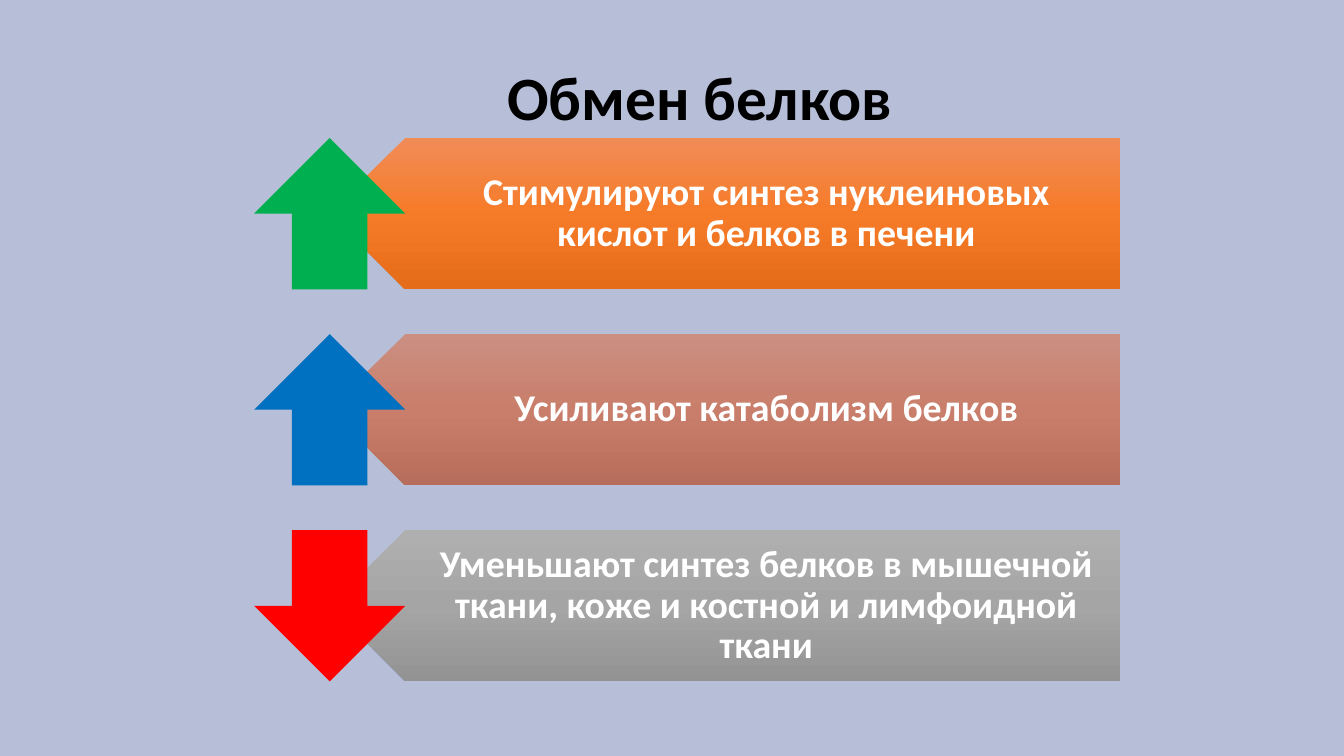
from dataclasses import dataclass
from lxml.etree import SubElement
from pptx import Presentation
from pptx.dml.color import RGBColor
from pptx.enum.shapes import MSO_SHAPE
from pptx.enum.text import MSO_ANCHOR, PP_ALIGN
from pptx.oxml.ns import qn
from pptx.util import Inches, Pt


@dataclass(frozen=True)
class Theme:
    font: str = "Calibri"
    back: str = "B7BED7"
    dark: str = "000000"
    light: str = "FFFFFF"
    green: str = "00B050"
    blue: str = "0070C0"
    red: str = "FF0000"
    orange: tuple = ("F18C57", "F67B28", "E56C19")
    brown: tuple = ("CB8F81", "C97E6B", "B76D5B")
    gray: tuple = ("AFAFAF", "A5A5A5", "939393")
    head: int = 44
    body: int = 27


class Deck:
    def __init__(self, theme):
        self.theme = theme
        self.show = Presentation()
        self.show.slide_width = Inches(13.33)
        self.show.slide_height = Inches(7.5)
        self.slide = self.show.slides.add_slide(self.show.slide_layouts[5])
        fill = self.slide.background.fill
        fill.solid()
        fill.fore_color.rgb = RGBColor.from_string(theme.back)

    def style(self, frame, text, size, color, align):
        frame.text = text
        frame.word_wrap = True
        frame.vertical_anchor = MSO_ANCHOR.MIDDLE
        line = frame.paragraphs[0]
        line.alignment = align
        line.line_spacing = 0.9
        font = line.runs[0].font
        font.name = self.theme.font
        font.size = Pt(size)
        font.bold = True
        font.color.rgb = RGBColor.from_string(color)

    def title(self, text, *box):
        title = self.slide.shapes.title
        title.left, title.top, title.width, title.height = map(Inches, box)
        self.style(title.text_frame, text, self.theme.head, self.theme.dark, PP_ALIGN.LEFT)

    def shape(self, kind, *box):
        shape = self.slide.shapes.add_shape(kind, *map(Inches, box))
        shape.shadow.inherit = False
        shape.line.fill.background()
        return shape

    def plate(self, colors, *box):
        plate = self.shape(MSO_SHAPE.PENTAGON, *box)
        plate.rotation = 180
        plate.fill.gradient()
        grad = plate.element.spPr.find(qn("a:gradFill"))
        grad.set("rotWithShape", "0")
        for child in list(grad):
            grad.remove(child)
        stops = SubElement(grad, qn("a:gsLst"))
        for i, color in enumerate(colors):
            stop = SubElement(stops, qn("a:gs"), pos=str(i * 50000))
            SubElement(stop, qn("a:srgbClr"), val=color)
        SubElement(grad, qn("a:lin"), ang="5400000", scaled="0")

    def label(self, text, *box):
        frame = self.slide.shapes.add_textbox(*map(Inches, box)).text_frame
        frame.margin_left, frame.margin_right = Inches(0.66), Inches(0.21)
        frame.margin_top = frame.margin_bottom = Inches(0.11)
        self.style(frame, text, self.theme.body, self.theme.light, PP_ALIGN.CENTER)

    def arrow(self, kind, color, *box):
        arrow = self.shape(kind, *box)
        arrow.fill.solid()
        arrow.fill.fore_color.rgb = RGBColor.from_string(color)


def main():
    theme = Theme()
    deck = Deck(theme)
    deck.title("Обмен белков", 4.93, 0.27, 11.5, 1.45)
    up, down = MSO_SHAPE.UP_ARROW, MSO_SHAPE.DOWN_ARROW
    rows = [
        ("Стимулируют синтез нуклеиновых кислот и белков в печени", theme.orange, up, theme.green),
        ("Усиливают катаболизм белков", theme.brown, up, theme.blue),
        ("Уменьшают синтез белков в мышечной ткани, коже и костной и лимфоидной ткани",
         theme.gray, down, theme.red),
    ]
    side, first, last = 1.5, 1.37, 5.26
    step = (last - first) / 2
    for i, (text, colors, kind, color) in enumerate(rows):
        top = first + i * step
        deck.plate(colors, 3.27, top, 7.84, side)
        deck.label(text, 3.64, top, 7.47, side)
        deck.arrow(kind, color, 2.52, top, side, side)
    deck.show.save("out.pptx")


if __name__ == "__main__":
    main()
